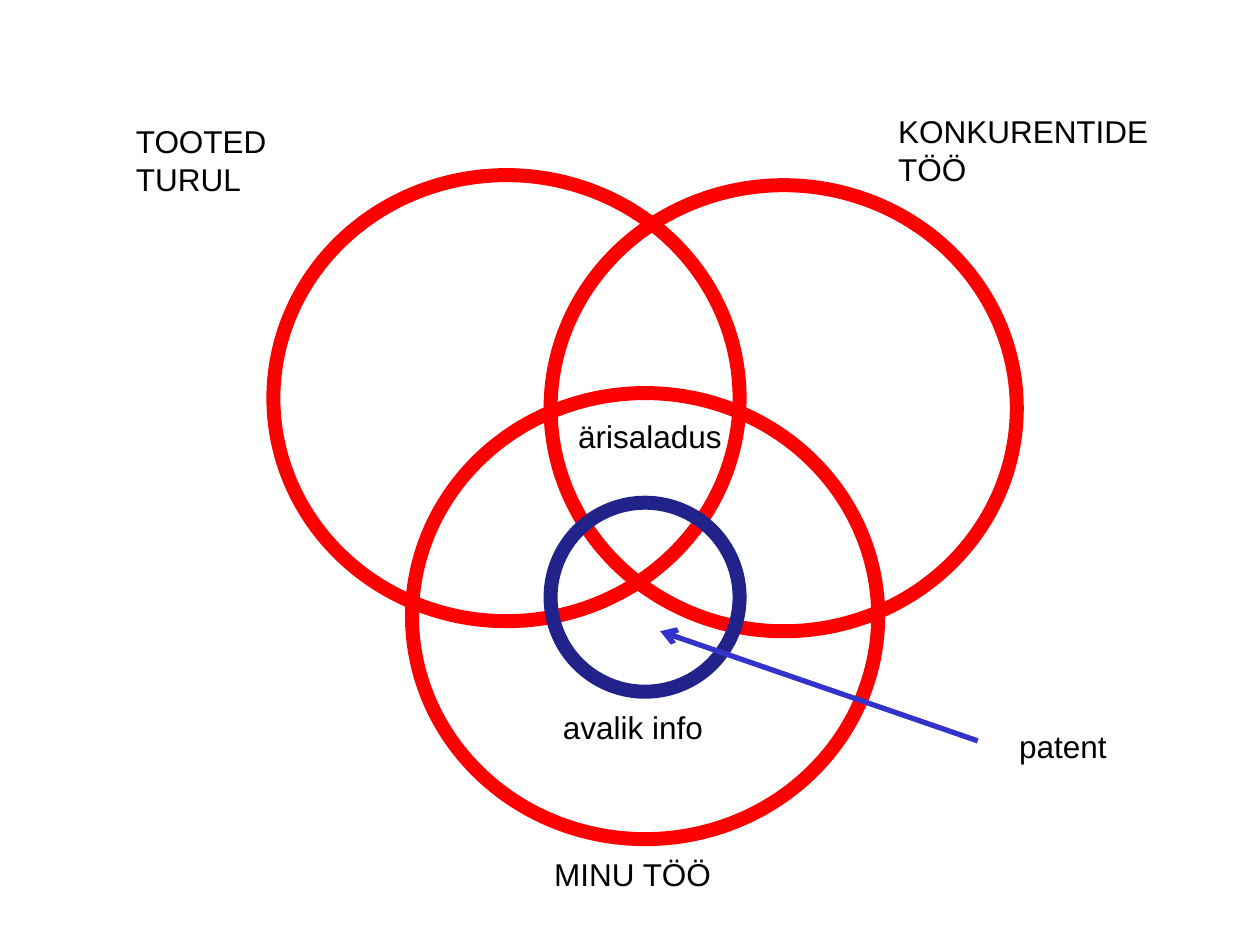
"""Build a Venn diagram slide about trade secrets, patents and public information."""
from lxml.etree import SubElement
from pptx import Presentation
from pptx.dml.color import RGBColor
from pptx.enum.shapes import MSO_CONNECTOR, MSO_SHAPE
from pptx.oxml.ns import qn
from pptx.util import Inches, Pt

COLORS = {"field": "FF0000", "patent": "22228B", "arrow": "3333CC", "text": "000000"}
FIELD_SIZE = (3.7, 3.54)
PATENT_SIZE = (1.5, 1.5)
FIELDS = [(2.17, 1.39), (3.27, 3.12), (4.37, 1.47)]
LABELS = [
    ("MINU TÖÖ", (4.3, 6.74, 1.88, 0.5)),
    ("KONKURENTIDE\nTÖÖ", (7.03, 0.84, 2.97, 0.91)),
    ("TOOTED\nTURUL", (0.98, 0.92, 1.69, 0.91)),
    ("patent", (7.99, 5.72, 1.14, 0.5)),
    ("avalik info", (4.37, 5.57, 1.34, 0.4)),
    ("ärisaladus", (4.49, 3.26, 1.5, 0.4)),
]


def rgb(name):
    """Return the named colour."""
    return RGBColor.from_string(COLORS[name])


def add_ring(slide, position, size, color, width=8):
    """Add an unfilled ellipse with a thick outline."""
    shape = slide.shapes.add_shape(
        MSO_SHAPE.OVAL, *(Inches(value) for value in position + size))
    shape.shadow.inherit = False
    shape.fill.background()
    shape.line.color.rgb = rgb(color)
    shape.line.width = Pt(width)


def add_arrow(slide, start, end, color, width=3):
    """Add a straight line with an open arrowhead at its end."""
    connector = slide.shapes.add_connector(
        MSO_CONNECTOR.STRAIGHT, *(Inches(value) for value in start + end))
    connector.line.color.rgb = rgb(color)
    connector.line.width = Pt(width)
    SubElement(connector.line._get_or_add_ln(), qn("a:tailEnd"), type="arrow")
    SubElement(connector._element.spPr, qn("a:effectLst"))


def add_label(slide, text, box, *, size=18, color="text", font="Arial"):
    """Add a text box with one paragraph for each line of text."""
    shape = slide.shapes.add_textbox(*(Inches(value) for value in box))
    frame = shape.text_frame
    frame.word_wrap = True
    frame.text = text
    for paragraph in frame.paragraphs:
        paragraph.font.name = font
        paragraph.font.size = Pt(size)
        paragraph.font.color.rgb = rgb(color)


def main():
    """Build and save the presentation."""
    presentation = Presentation()
    presentation.slide_width = Inches(10)
    presentation.slide_height = Inches(7.5)
    slide = presentation.slides.add_slide(presentation.slide_layouts[6])
    for position in FIELDS:
        add_ring(slide, position, FIELD_SIZE, "field")
    add_ring(slide, (4.37, 3.99), PATENT_SIZE, "patent")
    add_arrow(slide, (7.76, 5.88), (5.24, 5.01), "arrow")
    for text, box in LABELS:
        add_label(slide, text, box)
    presentation.save("out.pptx")


if __name__ == "__main__":
    main()
